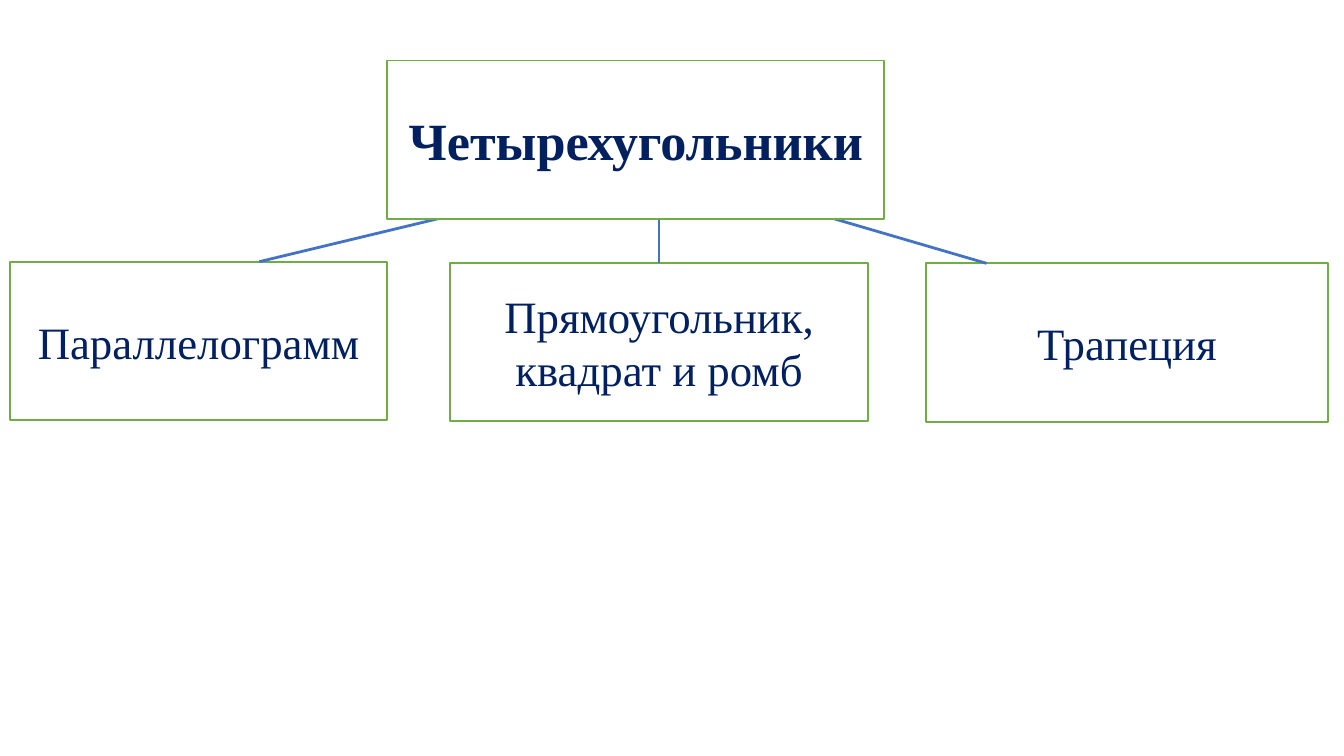
from pptx import Presentation
from pptx.dml.color import RGBColor
from pptx.enum import shapes, text
from pptx.oxml.ns import qn
from pptx.util import Pt

BOX_HEIGHT = 85
ROOT_BOX = (207.4, 32.4, 266.4, BOX_HEIGHT)
BRANCHES = [
    ("Параллелограмм", (5.6, 140.2, 201.6, BOX_HEIGHT), (139, 257.8), 111.6),
    ("Прямоугольник, квадрат и ромб", (241.1, 140.7, 224, BOX_HEIGHT), (353.1, 353.1), 117.4),
    ("Трапеция", (496.1, 141.1, 215.3, BOX_HEIGHT), (528.5, 427.7), 111.6),
]


def color(value):
    return RGBColor.from_string(value)


def add_figure(slide, name, box, **emphasis):
    figure = slide.shapes.add_shape(shapes.MSO_SHAPE.RECTANGLE, *map(Pt, box))
    figure.shadow.inherit = False
    figure.fill.solid()
    figure.fill.fore_color.rgb = color("FFFFFF")
    figure.line.color.rgb = color("70AD47")
    figure.line.width = Pt(1)
    frame = figure.text_frame
    frame.word_wrap = True
    frame.vertical_anchor = text.MSO_ANCHOR.MIDDLE
    label = frame.paragraphs[0]
    label.alignment = text.PP_ALIGN.CENTER
    run = label.add_run()
    run.text = name
    style = {"name": "Times New Roman", "size": Pt(24), **emphasis}
    for attribute, value in style.items():
        setattr(run.font, attribute, value)
    run.font.color.rgb = color("002060")
    return figure


def add_branch(slide, name, box, ends, root_y):
    left, top, width, _ = box
    branch_x, root_x = ends
    figure = add_figure(slide, name, box)
    link = slide.shapes.add_connector(
        shapes.MSO_CONNECTOR.STRAIGHT, Pt(branch_x), Pt(top), Pt(root_x), Pt(root_y)
    )
    if branch_x == left + width / 2:
        link.begin_connect(figure, 0)
    link.line.color.rgb = color("4472C4")
    link.line.width = Pt(1.5)
    properties = link._element.spPr
    properties.append(properties.makeelement(qn("a:effectLst"), {}))


def add_classification(slide):
    for branch in BRANCHES:
        add_branch(slide, *branch)
    add_figure(slide, "Четырехугольники", ROOT_BOX, size=Pt(28), bold=True)


def main():
    deck = Presentation()
    deck.slide_width, deck.slide_height = Pt(720), Pt(405)
    add_classification(deck.slides.add_slide(deck.slide_layouts[6]))
    deck.save("out.pptx")


if __name__ == "__main__":
    main()
